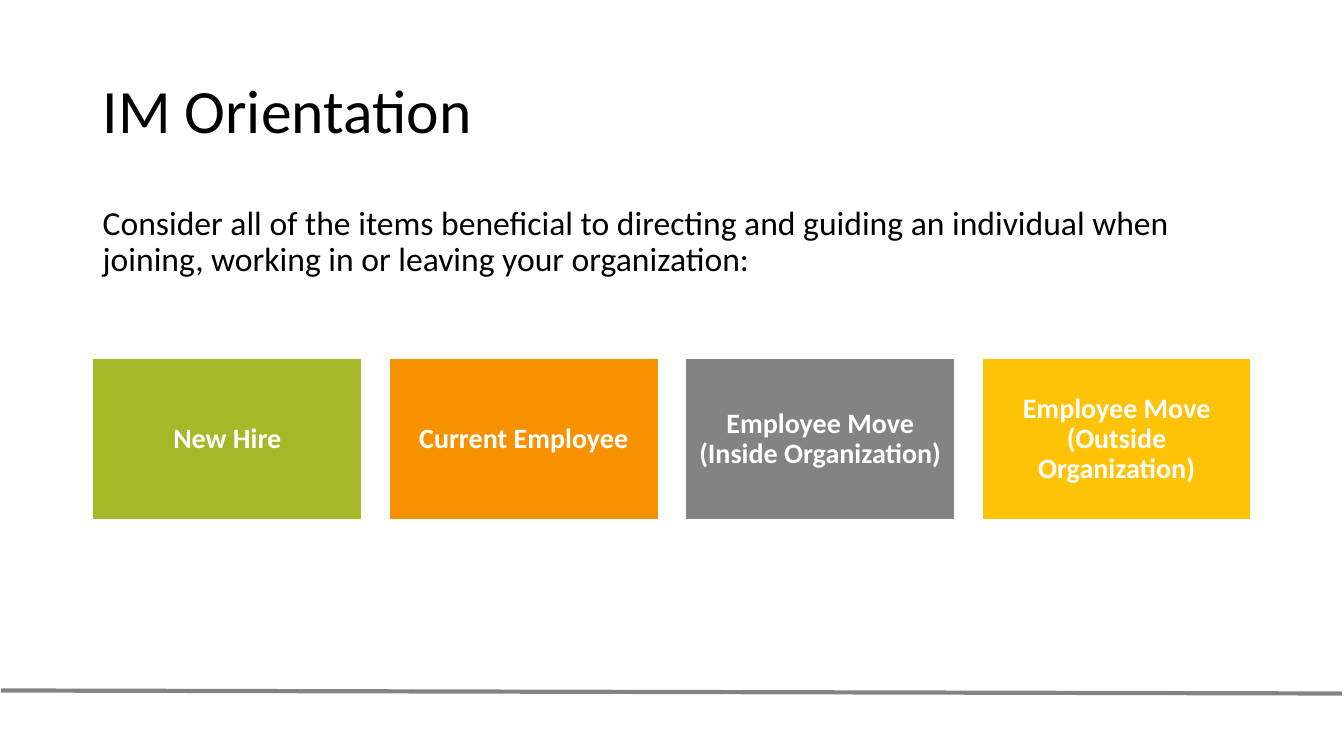
import pptx
import pptx.dml.color
import pptx.enum.shapes
import pptx.enum.text
import pptx.oxml
import pptx.util

INCH = pptx.util.Inches
WIDTH, HEIGHT = 13.33, 7.5
LEFT, CONTENT_WIDTH = 0.92, 11.5
CARD_TOP, CARD_WIDTH, CARD_HEIGHT, CARD_PITCH = 3.56, 2.67, 1.6, 2.94
COLORS = {
    "text": "000000",
    "white": "FFFFFF",
    "green": "A6B727",
    "orange": "F69200",
    "gray": "838383",
    "yellow": "FEC306",
}
CARDS = [
    ("New Hire", "green"),
    ("Current Employee", "orange"),
    ("Employee Move (Inside Organization)", "gray"),
    ("Employee Move (Outside Organization)", "yellow"),
]


def rgb(name):
    """Return the named palette colour."""
    return pptx.dml.color.RGBColor.from_string(COLORS[name])


def write(sp, text, size, color="text", bold=False, align="LEFT", anchor="TOP", inset=None):
    """Write one formatted paragraph into a shape."""
    tf = sp.text_frame
    tf.word_wrap = True
    tf.vertical_anchor = pptx.enum.text.MSO_ANCHOR[anchor]
    if inset is not None:
        tf.margin_left = tf.margin_right = tf.margin_top = tf.margin_bottom = INCH(inset)
    p = tf.paragraphs[0]
    p.alignment = pptx.enum.text.PP_ALIGN[align]
    p.line_spacing = 0.9
    r = p.add_run()
    r.text = text
    r.font.name = "Calibri"
    r.font.size = pptx.util.Pt(size)
    r.font.bold = bold
    r.font.color.rgb = rgb(color)


def add_text(s, top, height, text, size, **kwargs):
    """Add a text box across the content width."""
    sp = s.shapes.add_textbox(INCH(LEFT), INCH(top), INCH(CONTENT_WIDTH), INCH(height))
    write(sp, text, size, **kwargs)


def add_card(s, column, text, fill):
    """Add a coloured card in the given column."""
    sp = s.shapes.add_shape(
        pptx.enum.shapes.MSO_SHAPE.RECTANGLE,
        INCH(LEFT + column * CARD_PITCH), INCH(CARD_TOP), INCH(CARD_WIDTH), INCH(CARD_HEIGHT),
    )
    sp.shadow.inherit = False
    sp.fill.solid()
    sp.fill.fore_color.rgb = rgb(fill)
    sp.line.color.rgb = rgb("white")
    sp.line.width = pptx.util.Pt(1)
    write(sp, text, 20, color="white", bold=True, align="CENTER", anchor="MIDDLE", inset=0.08)


def add_rule(s, start, end):
    """Add the gray footer line."""
    sp = s.shapes.add_connector(
        pptx.enum.shapes.MSO_CONNECTOR.STRAIGHT, *map(INCH, start + end)
    )
    sp.line.color.rgb = rgb("gray")
    sp.line.width = pptx.util.Pt(3)
    props = sp._element.spPr
    props.append(props.makeelement(pptx.oxml.ns.qn("a:effectLst"), {}))


def main():
    """Build and save the slide."""
    prs = pptx.Presentation()
    prs.slide_width, prs.slide_height = INCH(WIDTH), INCH(HEIGHT)
    s = prs.slides.add_slide(prs.slide_layouts[6])
    add_rule(s, (0.01, 6.85), (13.31, 6.88))
    add_text(s, 0.4, 1.45, "IM Orientation", 44, anchor="MIDDLE")
    add_text(
        s, 2, 1.2,
        "Consider all of the items beneficial to directing and guiding an individual when "
        "joining, working in or leaving your organization:",
        24,
    )
    for column, (text, fill) in enumerate(CARDS):
        add_card(s, column, text, fill)
    prs.save("out.pptx")


if __name__ == "__main__":
    main()
